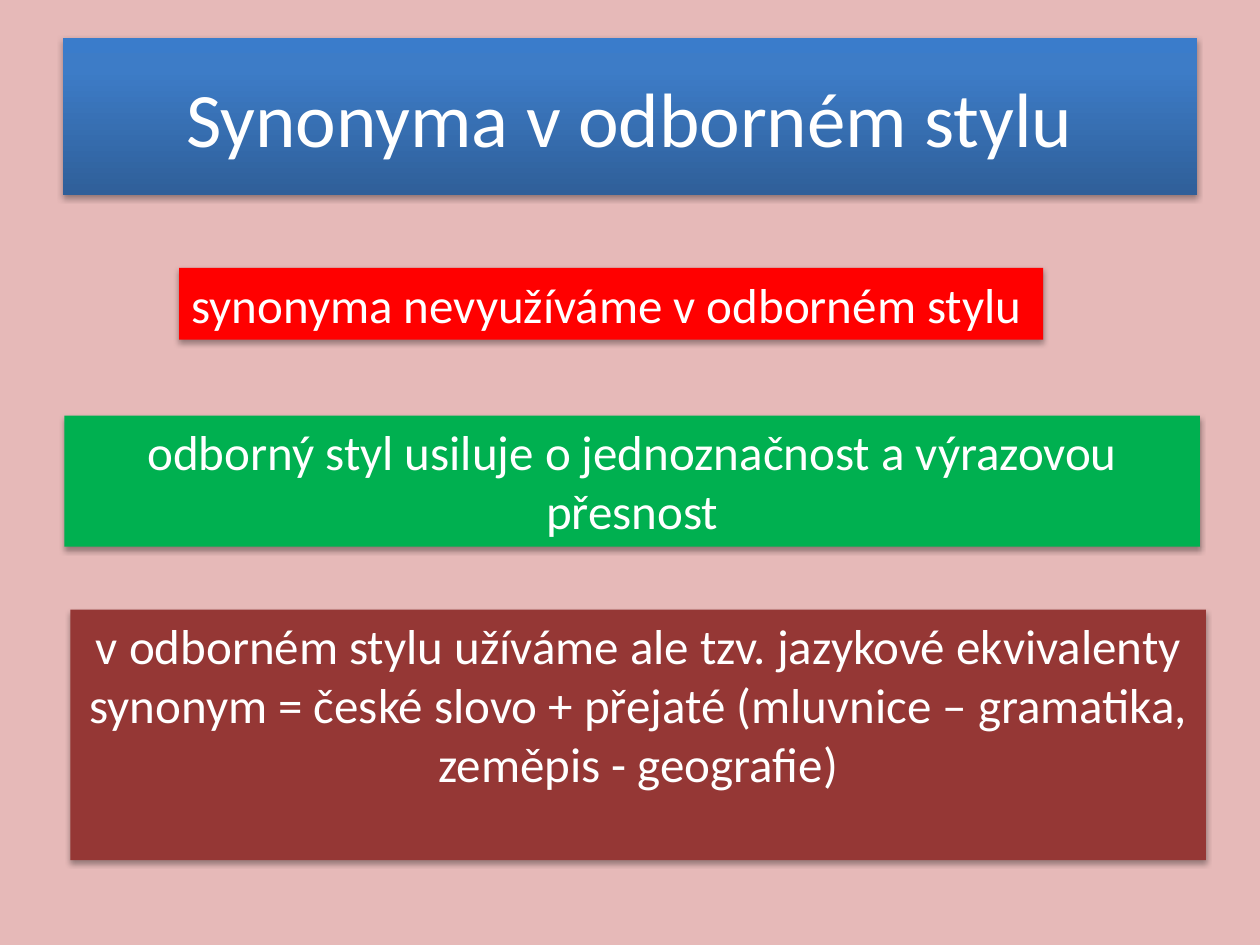
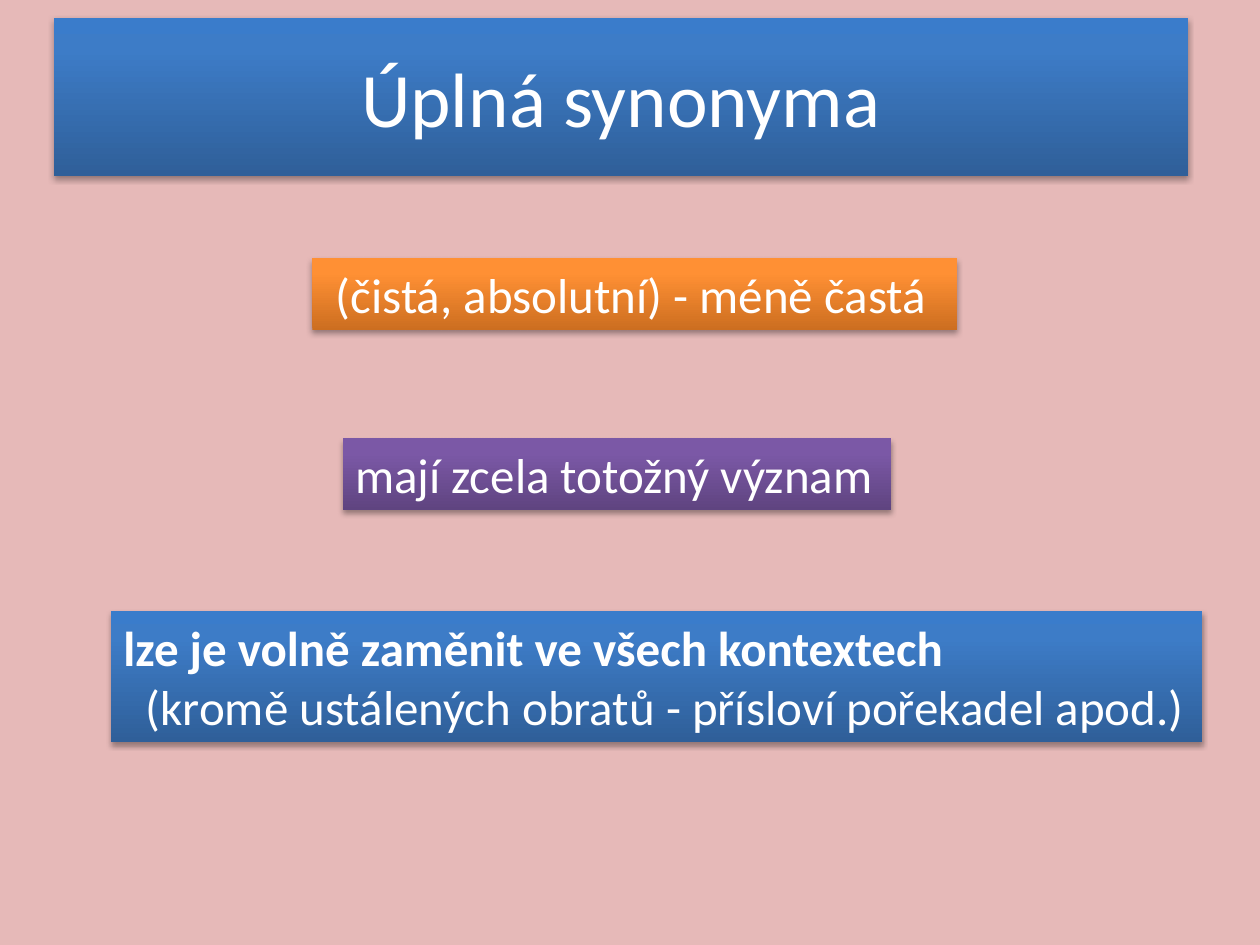
from lxml import etree
from pptx import Presentation
from pptx.dml.color import RGBColor
from pptx.enum.shapes import MSO_SHAPE
from pptx.enum.text import MSO_ANCHOR as ANCHOR, PP_ALIGN as ALIGN
from pptx.oxml import parse_xml
from pptx.oxml.ns import nsdecls, qn
from pptx.util import Cm, Pt

# Colours: a single colour is a plain fill, three are a bottom-to-top gradient
PINK = RGBColor(0xE6, 0xB9, 0xB8)
WHITE = RGBColor(0xFF, 0xFF, 0xFF)
RED = RGBColor(0xFF, 0x00, 0x00)
GREEN = RGBColor(0x00, 0xB0, 0x50)
MAROON = RGBColor(0x95, 0x37, 0x35)
BLUE = (RGBColor(0x2F, 0x5F, 0x99), RGBColor(0x3D, 0x7C, 0xC7), RGBColor(0x3A, 0x7C, 0xCB))
ORANGE = (RGBColor(0xCC, 0x6E, 0x20), RGBColor(0xFF, 0x90, 0x34), RGBColor(0xFF, 0x91, 0x36))
PURPLE = (RGBColor(0x5F, 0x44, 0x80), RGBColor(0x7B, 0x58, 0xA6), RGBColor(0x7C, 0x57, 0xA8))
STOPS = (0, 80000, 100000)

# Text formats
TITLE = {"size": Pt(44), "name": "Calibri", "bold": False}
BODY = {"size": Pt(28), "name": "Calibri", "bold": False}
STRONG = {**BODY, "bold": True}
TITLE_SIZE = (22.86, 3.18)


def paint(s, fill):
    """Fill the box, drop its outline and give it a soft shadow below."""
    if isinstance(fill, RGBColor):
        s.fill.solid()
        s.fill.fore_color.rgb = fill
    else:
        stops = "".join(f'<a:gs pos="{pos}"><a:srgbClr val="{c}"/></a:gs>'
                        for pos, c in zip(STOPS, fill))
        s._element.spPr.find(qn("a:prstGeom")).addnext(parse_xml(
            f'<a:gradFill {nsdecls("a")} rotWithShape="1"><a:gsLst>{stops}</a:gsLst>'
            '<a:lin ang="16200000" scaled="0"/></a:gradFill>'))
    s.line.fill.background()
    s.shadow.inherit = False
    effects = s._element.spPr.find(qn("a:effectLst"))
    shadow = etree.SubElement(effects, qn("a:outerShdw"), blurRad="40000",
                              dist="23000", dir="5400000", rotWithShape="0")
    color = etree.SubElement(shadow, qn("a:srgbClr"), val="000000")
    etree.SubElement(color, qn("a:alpha"), val="35000")


def add_box(slide, at, fill, anchor, lines):
    """Add a box; each line is (text, format, alignment, left indent in cm)."""
    s = slide.shapes.add_shape(MSO_SHAPE.RECTANGLE, *(Cm(v) for v in at))
    paint(s, fill)
    tf = s.text_frame
    tf.word_wrap = True
    tf.vertical_anchor = anchor
    for i, (text, fmt, align, indent) in enumerate(lines):
        p = tf.add_paragraph() if i else tf.paragraphs[0]
        p.alignment = align
        if indent:
            p._p.get_or_add_pPr().set("marL", str(Cm(indent)))
        r = p.add_run()
        r.text = text
        r.font.color.rgb = WHITE
        for key, value in fmt.items():
            setattr(r.font, key, value)


# Content: title, title position, then the boxes
SLIDES = [
    ("Synonyma v odborném stylu", (1.27, 0.76), [
        ((3.61, 5.4, 17.42, 1.45), RED,
         [("synonyma nevyužíváme v odborném stylu", BODY, ALIGN.LEFT, 0)]),
        ((1.3, 8.38, 22.89, 2.64), GREEN,
         [("odborný styl usiluje o jednoznačnost a výrazovou přesnost",
           BODY, ALIGN.CENTER, 0)]),
        ((1.42, 12.29, 22.89, 5.05), MAROON,
         [("v odborném stylu užíváme ale tzv. jazykové ekvivalenty synonym = "
           "české slovo + přejaté (mluvnice – gramatika, zeměpis - geografie)",
           BODY, ALIGN.CENTER, 0)]),
    ]),
    ("Úplná synonyma", (1.09, 0.36), [
        ((6.3, 5.21, 13, 1.45), ORANGE,
         [("(čistá, absolutní) - méně častá", BODY, ALIGN.LEFT, 0.22)]),
        ((6.91, 8.84, 11.05, 1.45), PURPLE,
         [("mají zcela totožný význam", BODY, ALIGN.LEFT, 0)]),
        ((2.24, 12.32, 22, 2.64), BLUE,
         [("lze je volně zaměnit ve všech kontextech", STRONG, ALIGN.LEFT, 0),
          ("(kromě ustálených obratů - přísloví pořekadel apod.)",
           BODY, ALIGN.LEFT, 0.45)]),
    ]),
]

prs = Presentation()
prs.slide_width, prs.slide_height = Cm(25.4), Cm(19.05)

for title, title_pos, boxes in SLIDES:
    slide = prs.slides.add_slide(prs.slide_layouts[6])
    background = slide.background.fill
    background.solid()
    background.fore_color.rgb = PINK
    # Title band
    add_box(slide, title_pos + TITLE_SIZE, BLUE, ANCHOR.MIDDLE,
            [(title, TITLE, ALIGN.CENTER, 0)])
    # Statements
    for at, fill, lines in boxes:
        add_box(slide, at, fill, ANCHOR.TOP, lines)

prs.save("out.pptx")
